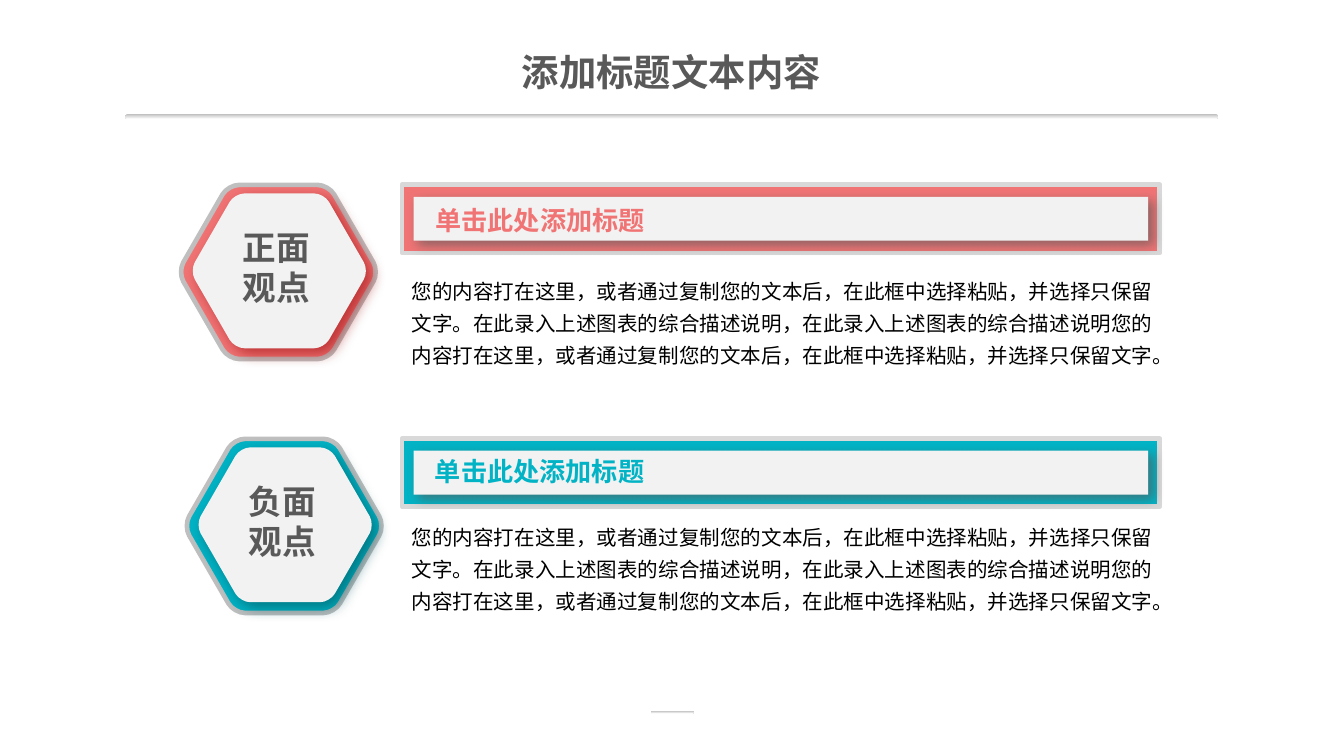
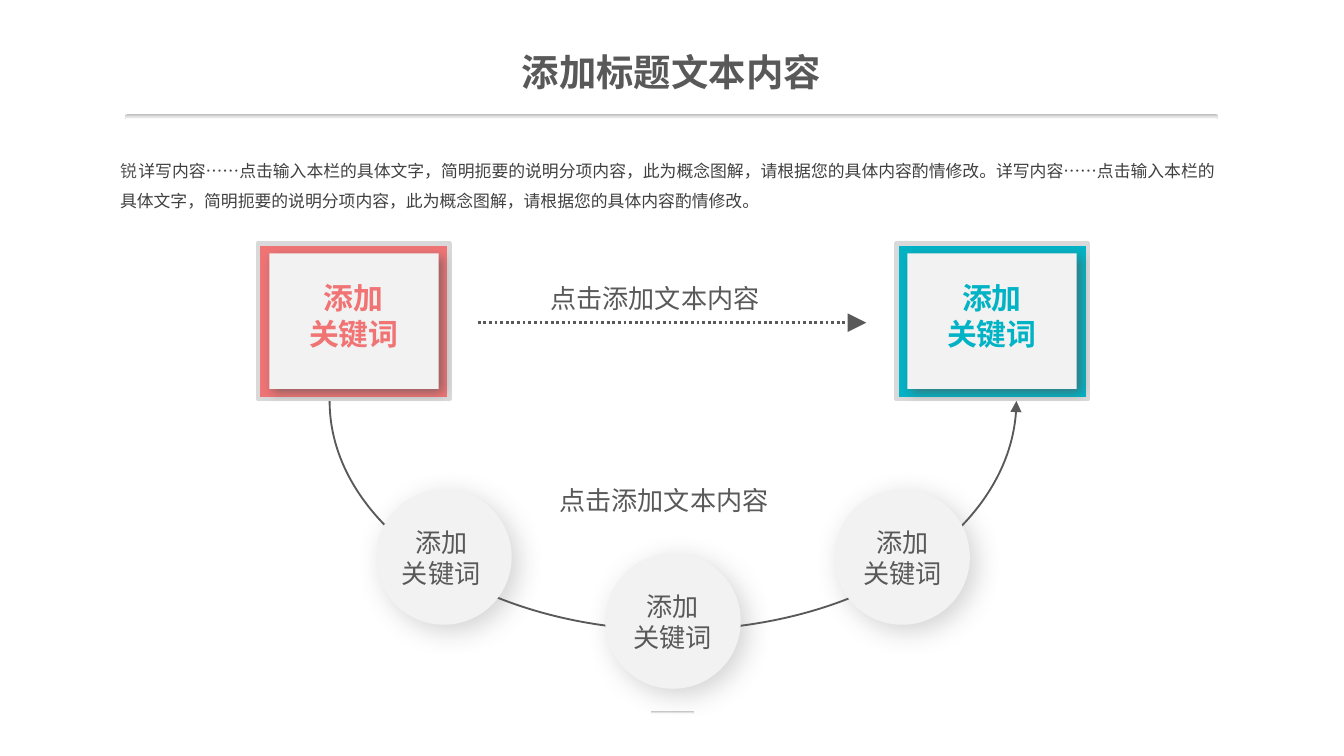
from math import cos, pi, sin

from lxml.etree import SubElement
from pptx import Presentation
from pptx.dml.color import RGBColor
from pptx.enum.dml import MSO_LINE
from pptx.enum.shapes import MSO_CONNECTOR, MSO_SHAPE
from pptx.enum.text import MSO_ANCHOR, MSO_AUTO_SIZE, PP_ALIGN
from pptx.oxml.ns import qn
from pptx.util import Cm, Pt

# Shared look
CORAL = RGBColor(0xF1, 0x74, 0x75)
TEAL = RGBColor(0x01, 0xB3, 0xC5)
CORAL_DARK = RGBColor(0xA2, 0x10, 0x11)
TEAL_DARK = RGBColor(0x00, 0x59, 0x62)
INK = RGBColor(0x59, 0x59, 0x59)
DARK = RGBColor(0x40, 0x40, 0x40)
BLACK = RGBColor(0, 0, 0)
WHITE = RGBColor(0xFF, 0xFF, 0xFF)
PALE = RGBColor(0xF2, 0xF2, 0xF2)
PANEL_EDGE = RGBColor(0xD9, 0xD9, 0xD9)
RULE = RGBColor(0xBF, 0xBF, 0xBF)
CJK = "Noto Sans CJK SC"
TITLE = "添加标题文本内容"

# Slide texts
HEADING = "单击此处添加标题"
BODY = ("您的内容打在这里，或者通过复制您的文本后，在此框中选择粘贴，并选择只保留文字。"
        "在此录入上述图表的综合描述说明，在此录入上述图表的综合描述说明"
        "您的内容打在这里，或者通过复制您的文本后，在此框中选择粘贴，并选择只保留文字。")
DETAIL = ("详写内容……点击输入本栏的具体文字，简明扼要的说明分项内容，"
          "此为概念图解，请根据您的具体内容酌情修改。")
KEYWORD = ["添加", "关键词"]
CAPTION = "点击添加文本内容"


def add_run(p, text, size, color, font="Arial", bold=False, spacing=0):
    r = p.add_run()
    r.text = text
    r.font.size = Pt(size)
    r.font.bold = bold
    r.font.color.rgb = color
    r.font.name = font
    rPr = r._r.get_or_add_rPr()
    SubElement(rPr, qn("a:ea")).set("typeface", CJK)
    if spacing:
        rPr.set("spc", str(spacing))


def set_frame(tf, inset=(0.18, 0.1)):
    tf.word_wrap = True
    tf.vertical_anchor = MSO_ANCHOR.TOP
    tf.margin_left = tf.margin_right = Cm(inset[0])
    tf.margin_top = tf.margin_bottom = Cm(inset[1])


def add_box(s, x, y, w, h, inset=(0.18, 0.1)):
    tf = s.shapes.add_textbox(Cm(x), Cm(y), Cm(w), Cm(h)).text_frame
    set_frame(tf, inset)
    tf.auto_size = MSO_AUTO_SIZE.SHAPE_TO_FIT_TEXT
    return tf


def add_label(s, x, y, w, h, lines, size, color, font="Arial", bold=False,
              align=PP_ALIGN.CENTER):
    tf = add_box(s, x, y, w, h)
    for i, line in enumerate(lines):
        p = tf.paragraphs[0] if i == 0 else tf.add_paragraph()
        p.alignment = align
        add_run(p, line, size, color, font, bold)


def set_shadow(sp, color, alpha, blur, dist):
    """Outer shadow falling at 45 degrees; alpha in percent, lengths in points."""
    effects = sp._element.spPr.find(qn("a:effectLst"))
    shadow = SubElement(effects, qn("a:outerShdw"), blurRad=str(Pt(blur)),
                        dist=str(Pt(dist)), dir="2700000", algn="tl", rotWithShape="0")
    clr = SubElement(shadow, qn("a:srgbClr"), val=str(color))
    SubElement(clr, qn("a:alpha"), val=str(alpha * 1000))


def style(sp, fill, edge=None):
    sp.shadow.inherit = False
    sp.fill.solid()
    sp.fill.fore_color.rgb = fill
    if edge is None:
        sp.line.fill.background()
    else:
        sp.line.color.rgb = edge
        sp.line.width = Pt(2.5)


def add_arrowhead(sp, end, size="med"):
    SubElement(sp.line._get_or_add_ln(), qn(end), type="triangle", w=size, len=size)


def add_round_rect(shapes, x, y, w, h, rounding=0):
    sp = shapes.add_shape(MSO_SHAPE.ROUNDED_RECTANGLE, Cm(x), Cm(y), Cm(w), Cm(h))
    sp.adjustments[0] = rounding
    return sp


def add_rule(s, x, y, w, h):
    sp = add_round_rect(s.shapes, x, y, w, h, 0.5)
    sp.shadow.inherit = False
    sp.line.fill.background()
    sp.fill.gradient()
    sp.fill.gradient_angle = 270
    for stop, color in zip(sp.fill.gradient_stops, (RULE, WHITE)):
        stop.color.rgb = color


def add_base(prs):
    """Slide with the shared title, header rule and footer mark."""
    s = prs.slides.add_slide(prs.slide_layouts[5])
    add_rule(s, 2.37, 2.16, 20.65, 0.09)
    add_rule(s, 12.3, 13.44, 0.81, 0.05)
    title = s.shapes.title
    title.left, title.top, title.width, title.height = Cm(7.8), Cm(0.82), Cm(9.78), Cm(1.04)
    tf = title.text_frame
    set_frame(tf)
    tf.auto_size = MSO_AUTO_SIZE.NONE
    tf.paragraphs[0].alignment = PP_ALIGN.CENTER
    add_run(tf.paragraphs[0], TITLE, 20, INK, bold=True)
    return s


def add_panel(s, x, y, w, h, gap_x, gap_y, color):
    """Coloured frame around a raised pale plate."""
    grp = s.shapes.add_group_shape()
    style(add_round_rect(grp.shapes, x, y, w, h), color, PANEL_EDGE)
    plate = add_round_rect(grp.shapes, x + gap_x, y + gap_y, w - 2 * gap_x, h - 2 * gap_y)
    style(plate, PALE)
    set_shadow(plate, INK, 64, 6, 3)


def add_curve(s, points, close):
    """Outline of cubic curves: a start, then two controls and an end for each."""
    pts = [(Cm(x), Cm(y)) for x, y in points]
    builder = s.shapes.build_freeform(*pts[0])
    builder.add_line_segments(pts[1:], close=close)
    sp = builder.convert_to_shape()
    path = next(sp._element.iter(qn("a:path")))
    lines = path.findall(qn("a:lnTo"))
    for trio in zip(lines[::3], lines[1::3], lines[2::3]):
        curve = path.makeelement(qn("a:cubicBezTo"))
        trio[0].addprevious(curve)
        for line in trio:
            curve.append(line[0])
            path.remove(line)
    return sp


def between(a, b, t):
    return a[0] + (b[0] - a[0]) * t, a[1] + (b[1] - a[1]) * t


def add_hexagon(s, cx, cy, radius):
    """Regular hexagon with rounded corners."""
    cut, bend = 0.11, 0.05
    corners = [(cx + radius * cos(k * pi / 3), cy + radius * sin(k * pi / 3))
               for k in range(6)]
    points = [between(corners[0], corners[-1], cut)]
    for k, corner in enumerate(corners):
        before, after = corners[k - 1], corners[(k + 1) % 6]
        edge_start, edge_end = between(corner, after, cut), between(after, corner, cut)
        points += [between(corner, before, bend), between(corner, after, bend), edge_start,
                   edge_start, edge_end, edge_end]
    return add_curve(s, points, close=True)


def add_badge(s, cx, cy, color, shade, lines):
    style(add_hexagon(s, cx, cy, 1.9), color, RULE)
    plate = add_hexagon(s, cx + 0.02, cy - 0.02, 1.69)
    style(plate, PALE)
    set_shadow(plate, shade, 64, 8, 4)
    add_label(s, cx - 1.33, cy - 0.95, 2.59, 1.73, lines, 18, INK, "Quicksand", True)


def add_arc_arrow(s, cx, cy, rx, ry):
    """Lower half of an ellipse, with the arrowhead at its right end."""
    k = 0.55
    arc = add_curve(s, [(cx + rx, cy),
                        (cx + rx, cy + k * ry), (cx + k * rx, cy + ry), (cx, cy + ry),
                        (cx - k * rx, cy + ry), (cx - rx, cy + k * ry), (cx - rx, cy)],
                    close=False)
    arc.shadow.inherit = False
    arc.fill.background()
    arc.line.color.rgb = INK
    arc.line.width = Pt(1)
    add_arrowhead(arc, "a:headEnd")


def add_dotted_arrow(s, x1, x2, y):
    cn = s.shapes.add_connector(MSO_CONNECTOR.STRAIGHT, Cm(x1), Cm(y), Cm(x2), Cm(y))
    cn.line.color.rgb = INK
    cn.line.width = Pt(1.5)
    cn.line.dash_style = MSO_LINE.ROUND_DOT
    add_arrowhead(cn, "a:tailEnd", "lg")
    SubElement(cn._element.spPr, qn("a:effectLst"))


def add_disc(s, x, y):
    disc = s.shapes.add_shape(MSO_SHAPE.OVAL, Cm(x), Cm(y), Cm(2.56), Cm(2.56))
    style(disc, PALE)
    set_shadow(disc, INK, 25, 14, 5)


def build_viewpoints(prs):
    s = add_base(prs)
    # colour, shade, badge text, badge x, panel y, heading x, y and width, body y
    rows = [(CORAL, CORAL_DARK, ["正面", "观点"], 5.26, 3.49, 7.98, 3.73, 11.53, 5.04),
            (TEAL, TEAL_DARK, ["负面", "观点"], 5.37, 8.29, 7.97, 8.48, 8.28, 9.68)]
    for color, shade, name, badge_x, y, heading_x, heading_y, heading_w, body_y in rows:
        add_panel(s, 7.6, y, 14.32, 1.29, 0.22, 0.23, color)
        heading = add_box(s, heading_x, heading_y, heading_w, 0.86, (0.25, 0.13))
        add_run(heading.paragraphs[0], HEADING, 14, color, CJK, True)
        p = add_box(s, 7.6, body_y, 14.5, 2.03).paragraphs[0]
        p.line_spacing = 1.3
        add_run(p, BODY, 11, BLACK, CJK)
        add_badge(s, badge_x, y + 1.65, color, shade, name)


def build_cycle(prs):
    s = add_base(prs)
    # Arc behind the panels and discs
    add_arc_arrow(s, 12.72, 7.58, 6.49, 4.33)
    for x, color in ((4.88, CORAL), (16.94, TEAL)):
        add_panel(s, x, 4.6, 3.62, 2.94, 0.21, 0.19, color)
        add_label(s, x + 0.55, 5.19, 2.51, 1.55, KEYWORD, 16, color, bold=True)
    add_dotted_arrow(s, 9.03, 16.37, 6.1)
    # Discs and their keywords
    for i, (y, label_x) in enumerate(((9.25, 7.31), (10.46, 11.68), (9.25, 16.03))):
        add_disc(s, 7.11 + 4.33 * i, y)
        add_label(s, label_x, y + 0.6, 2.06, 1.4, KEYWORD, 14, INK)
    # Captions
    for x, y, w in ((10.22, 5.23, 4.98), (10.39, 9.06, 4.65)):
        add_label(s, x, y, w, 0.79, [CAPTION], 14, INK, align=PP_ALIGN.JUSTIFY)
    # Introduction
    p = add_box(s, 2.09, 2.74, 21.18, 1.27).paragraphs[0]
    p.line_spacing = 1.5
    add_run(p, "锐", 9, INK, spacing=80)
    add_run(p, DETAIL * 2, 9, DARK, CJK)


def main():
    prs = Presentation()
    prs.slide_width, prs.slide_height = Cm(25.4), Cm(14.29)
    build_viewpoints(prs)
    build_cycle(prs)
    prs.save("out.pptx")


if __name__ == "__main__":
    main()
